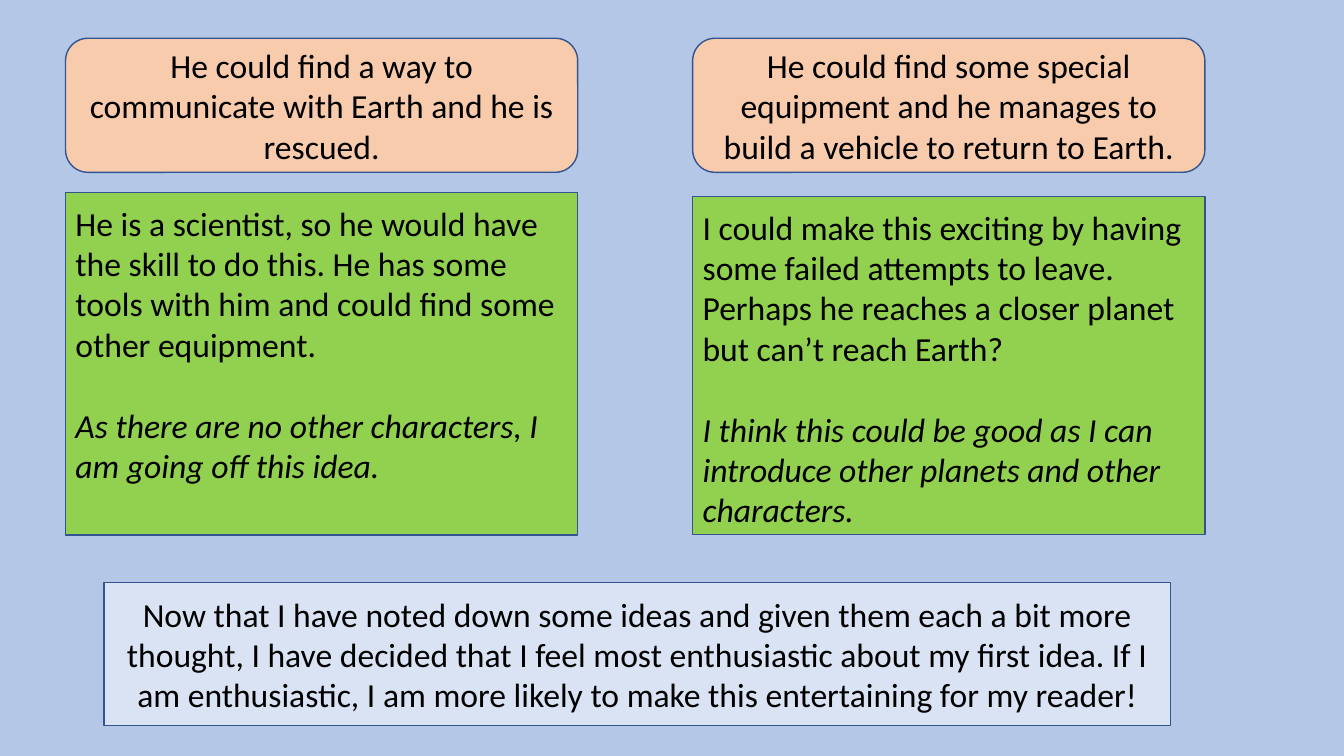
from dataclasses import dataclass

from pptx import Presentation
from pptx import util as u
from pptx.dml.color import RGBColor
from pptx.enum import shapes, text

ROUNDED = shapes.MSO_SHAPE.ROUNDED_RECTANGLE
RECTANGLE = shapes.MSO_SHAPE.RECTANGLE
CENTER = text.PP_ALIGN.CENTER
LEFT = text.PP_ALIGN.LEFT

BACKGROUND, PEACH, GREEN, PALE_BLUE = "B4C7E7", "F8CBAD", "92D050", "DAE3F3"
OUTLINE, BLACK = "325491", "000000"
COLUMN_LEFTS = (0.65, 6.87)
COLUMN_WIDTH = 5.08


@dataclass
class Panel:
    left: float
    top: float
    width: float
    height: float
    fill: str
    lines: list[str]
    outline_shape: shapes.MSO_SHAPE = RECTANGLE
    align: text.PP_ALIGN = CENTER


@dataclass
class Idea:
    ending: str
    thought: str
    verdict: str
    thought_top: float
    thought_height: float


IDEAS = [
    Idea("He could find a way to communicate with Earth and he is rescued.",
         "He is a scientist, so he would have the skill to do this. He has some "
         "tools with him and could find some other equipment.",
         "As there are no other characters, I am going off this idea.",
         1.91, 3.4),
    Idea("He could find some special equipment and he manages to build a vehicle "
         "to return to Earth.",
         "I could make this exciting by having some failed attempts to leave. "
         "Perhaps he reaches a closer planet but can’t reach Earth?",
         "I think this could be good as I can introduce other planets and other "
         "characters.",
         1.95, 3.35),
]
CONCLUSION = (
    "Now that I have noted down some ideas and given them each a bit more thought, "
    "I have decided that I feel most enthusiastic about my first idea. If I am "
    "enthusiastic, I am more likely to make this entertaining for my reader!")


def color(value: str) -> RGBColor:
    return RGBColor.from_string(value)


def add_panel(page, panel: Panel):
    box = page.shapes.add_shape(
        panel.outline_shape, u.Inches(panel.left), u.Inches(panel.top),
        u.Inches(panel.width), u.Inches(panel.height))
    box.shadow.inherit = False
    box.fill.solid()
    box.fill.fore_color.rgb = color(panel.fill)
    box.line.color.rgb = color(OUTLINE)
    box.line.width = u.Pt(1)

    frame = box.text_frame
    frame.word_wrap = True
    frame.vertical_anchor = text.MSO_ANCHOR.MIDDLE
    frame.text = "\n".join(panel.lines)
    for para in frame.paragraphs:
        para.alignment = panel.align
        for span in para.runs:
            span.font.name = "Calibri"
            span.font.size = u.Pt(24)
            span.font.color.rgb = color(BLACK)
    return box


def add_idea(page, idea: Idea, left: float) -> None:
    add_panel(page, Panel(left, 0.38, COLUMN_WIDTH, 1.33, PEACH,
                          [idea.ending], ROUNDED))
    box = add_panel(page, Panel(left, idea.thought_top, COLUMN_WIDTH,
                                idea.thought_height, GREEN,
                                [idea.thought, idea.verdict], align=LEFT))
    # Thought at the top, verdict one line below in italics
    frame = box.text_frame
    frame.vertical_anchor = text.MSO_ANCHOR.TOP
    frame.margin_top = u.Inches(0.1)
    frame.margin_bottom = u.Inches(0)
    thought, verdict = frame.paragraphs
    thought.space_after = u.Pt(29)
    verdict.runs[0].font.italic = True


def main() -> None:
    deck = Presentation()
    deck.slide_width = u.Inches(13.33)
    deck.slide_height = u.Inches(7.5)
    page = deck.slides.add_slide(deck.slide_layouts[6])
    page.background.fill.solid()
    page.background.fill.fore_color.rgb = color(BACKGROUND)

    # Two story ideas side by side
    for idea, left in zip(IDEAS, COLUMN_LEFTS):
        add_idea(page, idea, left)

    # Conclusion across the bottom
    add_panel(page, Panel(1.03, 5.78, 10.58, 1.42, PALE_BLUE, [CONCLUSION]))

    deck.save("out.pptx")


if __name__ == "__main__":
    main()
